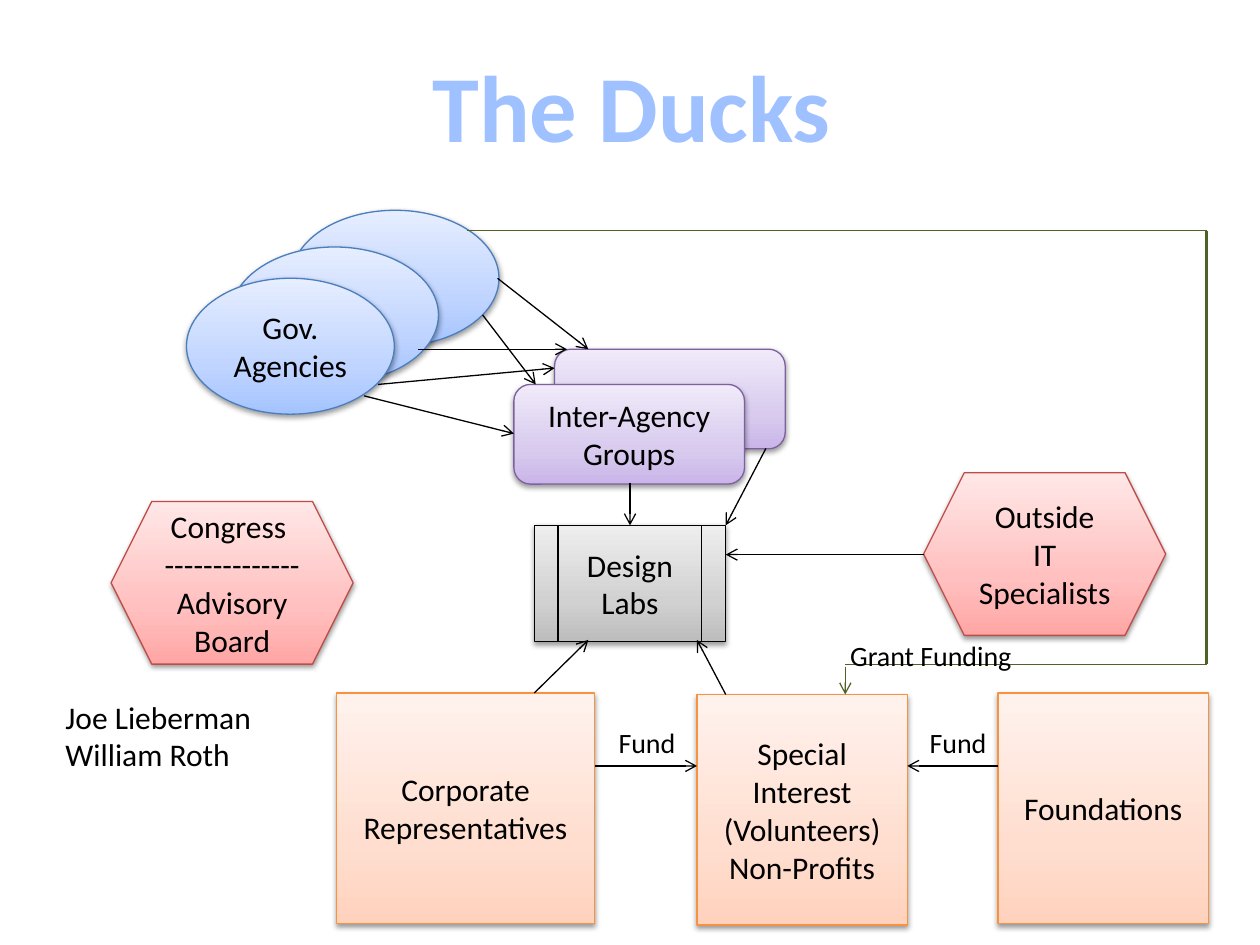
from copy import deepcopy

from lxml import etree
from pptx import Presentation
from pptx import util as u
from pptx.dml import color
from pptx.enum import shapes, text
from pptx.oxml import ns

KIND = shapes.MSO_SHAPE
BLUE = ("A4C4FF", "BFD4FF", "E6EEFF", "4B7EBC")
PURPLE = ("C9B5E8", "D8CBEE", "F0EAF9", "7D60A0")
ORANGE = ("FFD2BD", "FFDED0", "FFF2ED", "F69240")
GRAY = ("BDBDBD", "D1D1D1", "EEEEEE", "000000")
RED = ("FFA6A5", "FFC0BF", "FFE7E7", "BF4C48")
BLACK, GREEN, TITLE = "000000", "4F6228", "A0C1FF"


def rgb(value):
    return color.RGBColor.from_string(value)


def child(parent, tag, **attributes):
    return etree.SubElement(parent, ns.qn(tag), attributes)


class Diagram:
    """Draws the styled elements of a diagram on the current slide."""

    font = "Calibri"
    stops = (0, 0.35, 1)

    def __init__(self, page):
        self.page = page

    def add_lines(self, frame, lines, size, ink=BLACK, bold=False, align=text.PP_ALIGN.CENTER):
        for index, line in enumerate(lines):
            para = frame.paragraphs[0] if index == 0 else frame.add_paragraph()
            para.alignment = align
            span = para.add_run()
            span.text = line
            span.font.name = self.font
            span.font.size = u.Pt(size)
            span.font.bold = bold
            span.font.color.rgb = rgb(ink)

    def box(self, kind, place, size, palette, *lines):
        box = self.page.shapes.add_shape(kind, *map(u.Cm, place + size))
        *tones, edge = palette
        box.fill.gradient()
        box.fill.gradient_angle = 90
        stop_list = box._element.spPr.find(".//" + ns.qn("a:gsLst"))
        stop_list.append(deepcopy(stop_list[0]))
        for stop, position, tone in zip(box.fill.gradient_stops, self.stops, tones):
            stop.position = position
            stop.color.rgb = rgb(tone)
        box.line.color.rgb = rgb(edge)
        box.line.width = u.Pt(0.75)
        self.shade(box)
        box.text_frame.word_wrap = True
        box.text_frame.vertical_anchor = text.MSO_ANCHOR.MIDDLE
        self.add_lines(box.text_frame, lines, 18)

    def shade(self, box):
        box.shadow.inherit = False
        effects = box._element.spPr.find(ns.qn("a:effectLst"))
        shadow = child(effects, "a:outerShdw", blurRad=str(u.Pt(3.1)),
                       dist=str(u.Pt(1.6)), dir="5400000", rotWithShape="0")
        child(child(shadow, "a:srgbClr", val=BLACK), "a:alpha", val="38000")

    def label(self, place, size, lines, points, align=text.PP_ALIGN.LEFT, **look):
        box = self.page.shapes.add_textbox(*map(u.Cm, place + size))
        box.text_frame.word_wrap = False
        box.text_frame.auto_size = text.MSO_AUTO_SIZE.SHAPE_TO_FIT_TEXT
        self.add_lines(box.text_frame, lines, points, align=align, **look)

    def line(self, start, end, ink=BLACK, width=0.75, arrow=True):
        line = self.page.shapes.add_connector(
            shapes.MSO_CONNECTOR.STRAIGHT, *map(u.Cm, start + end))
        line.line.color.rgb = rgb(ink)
        line.line.width = u.Pt(width)
        properties = line._element.spPr
        if arrow:
            child(properties.find(ns.qn("a:ln")), "a:tailEnd", type="arrow")
        child(properties, "a:effectLst")


def main():
    deck = Presentation()
    deck.slide_width, deck.slide_height = u.Cm(25.4), u.Cm(19.05)
    diagram = Diagram(deck.slides.add_slide(deck.slide_layouts[6]))

    group, agency, outsider, sponsor = (4.65, 2.01), (4.19, 2.74), (4.88, 3.28), (4.24, 4.65)
    for kind, place, size, palette, *lines in (
        (KIND.ROUNDED_RECTANGLE, (11.18, 7.04), group, PURPLE),
        (KIND.OVAL, (5.87, 4.24), agency, BLUE),
        (KIND.OVAL, (4.65, 4.98), agency, BLUE),
        (KIND.OVAL, (3.76, 5.61), agency, BLUE, "Gov. Agencies"),
        (KIND.ROUNDED_RECTANGLE, (10.36, 7.75), group, PURPLE, "Inter-Agency", "Groups"),
        (KIND.RECTANGLE, (14.05, 14), sponsor, ORANGE,
         "Special Interest", "(Volunteers)", "Non-Profits"),
        (KIND.RECTANGLE, (6.78, 13.97), (5.21, 4.65), ORANGE, "Corporate Representatives"),
        (KIND.FLOWCHART_PREDEFINED_PROCESS, (10.77, 10.59), (3.86, 2.34), GRAY, "Design Labs"),
        (KIND.HEXAGON, (18.62, 9.53), outsider, RED, "Outside", "IT Specialists"),
        (KIND.HEXAGON, (2.24, 10.11), outsider, RED,
         "Congress ", "--------------", "Advisory Board"),
        (KIND.RECTANGLE, (20.12, 13.97), sponsor, ORANGE, "Foundations"),
    ):
        diagram.box(kind, place, size, palette, *lines)

    for start, end in (
        ((7.34, 7.98), (10.36, 8.74)),
        ((9.73, 6.35), (10.8, 7.75)),
        ((7.62, 7.75), (11.18, 7.42)),
        ((8.43, 7.04), (11.43, 7.04)),
        ((10.03, 5.61), (11.86, 7.04)),
        ((18.62, 11.18), (14.63, 11.18)),
        ((12.7, 9.73), (12.7, 10.59)),
        ((15.44, 9.04), (14.63, 10.59)),
        ((10.77, 13.97), (11.86, 12.9)),
        ((14.63, 14), (14.05, 12.9)),
        ((11.99, 15.44), (14.05, 15.44)),
        ((20.12, 15.44), (18.29, 15.44)),
    ):
        diagram.line(start, end)

    top_corner, bottom_corner = (24.33, 4.65), (24.33, 13.39)
    diagram.line(top_corner, bottom_corner, GREEN, 1.75, arrow=False)
    diagram.line(bottom_corner, (17.04, 13.39), GREEN, arrow=False)
    diagram.line((17.04, 13.44), (17.04, 14), GREEN)
    diagram.line(top_corner, (9.42, 4.65), GREEN, arrow=False)

    diagram.label((8.43, 0.84), (8.61, 2.57), ["The Ducks"], 54,
                  align=text.PP_ALIGN.CENTER, ink=TITLE, bold=True)
    diagram.label((1.07, 13.94), (4.29, 1.8), ["Joe Lieberman", "William Roth"], 18)
    for left in (12.22, 18.49):
        diagram.label((left, 14.5), (1.68, 0.94), ["Fund"], 16)
    diagram.label((16.89, 12.75), (3.81, 0.94), ["Grant Funding"], 16)
    deck.save("out.pptx")


if __name__ == "__main__":
    main()
